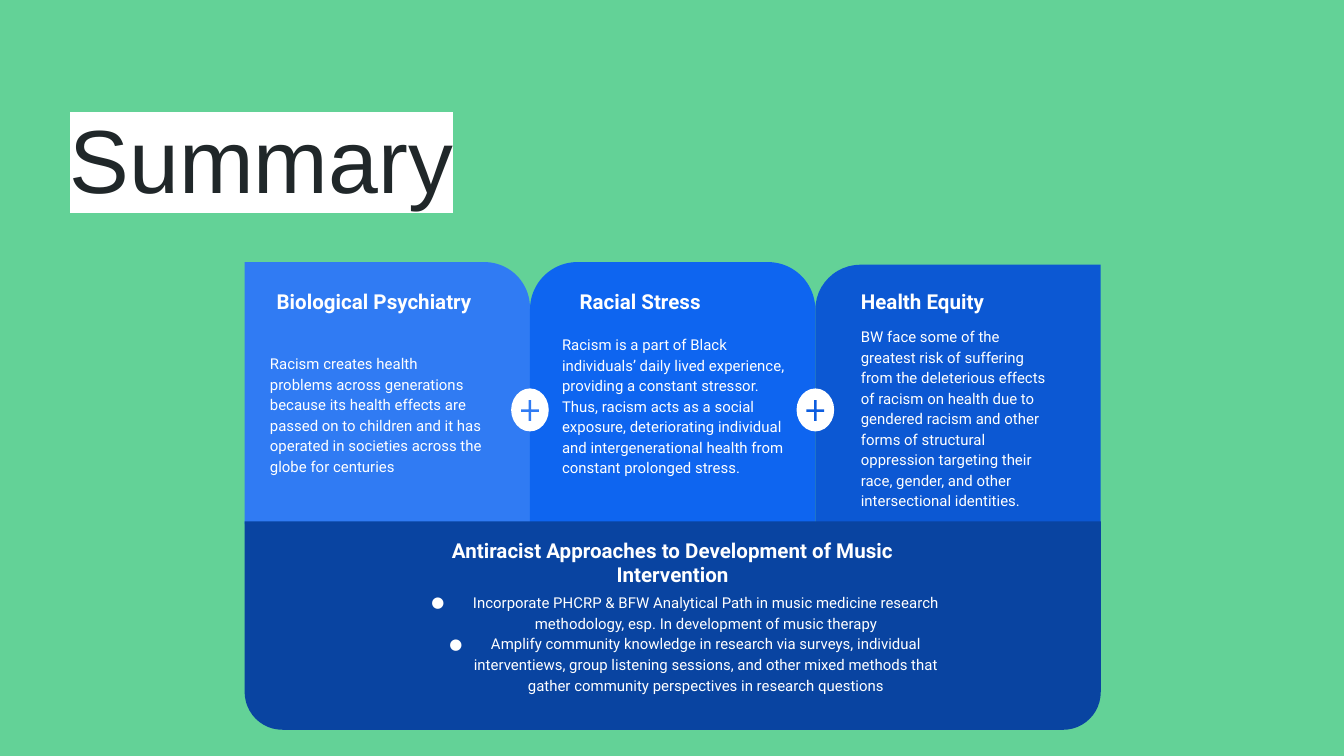
import pptx
import pptx.dml.color
import pptx.enum.shapes
import pptx.enum.text
import pptx.oxml.ns
import pptx.util
from lxml import etree

Inches = pptx.util.Inches
Pt = pptx.util.Pt
RGBColor = pptx.dml.color.RGBColor
Shape = pptx.enum.shapes.MSO_SHAPE
Align = pptx.enum.text.PP_ALIGN
Anchor = pptx.enum.text.MSO_ANCHOR
AutoSize = pptx.enum.text.MSO_AUTO_SIZE
qn = pptx.oxml.ns.qn

GREEN = RGBColor(0x63, 0xD2, 0x97)
INK = RGBColor(0x20, 0x27, 0x29)
WHITE = RGBColor(0xFF, 0xFF, 0xFF)
LIGHT_BLUE = RGBColor(0x30, 0x7B, 0xF3)
BRIGHT_BLUE = RGBColor(0x0E, 0x65, 0xF0)
DEEP_BLUE = RGBColor(0x0C, 0x58, 0xD3)
PLUS_BLUE = RGBColor(0x0D, 0x5D, 0xDF)
NAVY = RGBColor(0x09, 0x44, 0xA1)

FRAME = {"word_wrap": True, "auto_size": AutoSize.NONE}
FRAME.update({f"margin_{side}": Inches(0.1) for side in ("left", "top", "right", "bottom")})
TITLE = {"name": "Arial", "size": Pt(48)}
HEADING = {"name": "Roboto", "size": Pt(11), "bold": True}
BODY = {"name": "Roboto", "size": Pt(8)}

DIAGRAM_LEFT, DIAGRAM_WIDTH = 1.82, 6.37
CARD_TOP, CARD_HEIGHT = 1.95, 1.95
CARDS = [
    {"heading": "Biological Psychiatry", "heading_box": (0.14, 0.1, 1.89, 0.57),
     "body": "Racism creates health problems across generations because its health effects "
             "are passed on to children and it has operated in societies across the globe "
             "for centuries",
     "body_box": (0.09, 0.57, 1.79, 0.64), "drop": 0,
     "outline": Shape.ROUND_1_RECTANGLE, "corners": (0.174,), "color": LIGHT_BLUE},
    {"heading": "Racial Stress", "heading_box": (0.27, 0.1, 1.59, 0.57),
     "body": "Racism is a part of Black individuals’ daily lived experience, providing a "
             "constant stressor. Thus, racism acts as a social exposure, deteriorating "
             "individual and intergenerational health from constant prolonged stress.",
     "body_box": (0.14, 0.43, 1.89, 0.64), "drop": 0,
     "outline": Shape.ROUND_2_SAME_RECTANGLE, "corners": (0.181, 0), "color": BRIGHT_BLUE},
    {"heading": "Health Equity", "heading_box": (0.24, 0.1, 1.59, 0.57),
     "body": "BW face some of the greatest risk of suffering from the deleterious effects "
             "of racism on health due to gendered racism and other forms of structural "
             "oppression targeting their race, gender, and other intersectional identities.",
     "body_box": (0.24, 0.37, 1.59, 0.63), "drop": 0.02, "mirrored": True,
     "outline": Shape.ROUND_1_RECTANGLE, "corners": (0.174,), "color": DEEP_BLUE},
]
APPROACHES = [
    "Incorporate PHCRP & BFW Analytical Path in music medicine research methodology, "
    "esp. In development of music therapy",
    "Amplify community knowledge in research via surveys, individual interventiews, "
    "group listening sessions, and other mixed methods that gather community "
    "perspectives in research questions",
]


def apply_format(target, values):
    """Set each attribute named in a dict of format values."""
    for name, value in values.items():
        setattr(target, name, value)


def add_panel(slide, outline, box, color, corners=()):
    """Add a borderless filled shape with the given corner adjustments."""
    panel = slide.shapes.add_shape(outline, *map(Inches, box))
    panel.shadow.inherit = False
    panel.fill.solid()
    panel.fill.fore_color.rgb = color
    panel.line.fill.background()
    for index, corner in enumerate(corners):
        panel.adjustments[index] = corner
    return panel


def add_bullet(paragraph):
    """Give a paragraph a white hanging round bullet."""
    properties = paragraph._p.get_or_add_pPr()
    properties.set("marL", str(Inches(0.5)))
    properties.set("indent", str(Inches(-0.31)))
    bullet_color = etree.SubElement(properties, qn("a:buClr"))
    etree.SubElement(bullet_color, qn("a:srgbClr"), val=str(WHITE))
    etree.SubElement(properties, qn("a:buFont"), typeface=BODY["name"])
    etree.SubElement(properties, qn("a:buChar"), char="●")


def add_text(slide, box, lines, font, spacing=1.0, align=Align.LEFT, bulleted=False):
    """Add a white text box with one paragraph for each line."""
    frame = slide.shapes.add_textbox(*map(Inches, box)).text_frame
    apply_format(frame, FRAME)
    for index, line in enumerate(lines):
        paragraph = frame.add_paragraph() if index else frame.paragraphs[0]
        if bulleted:
            add_bullet(paragraph)
        apply_format(paragraph, {"alignment": align, "line_spacing": spacing})
        run = paragraph.add_run()
        run.text = line
        apply_format(run.font, font)
        run.font.color.rgb = WHITE


def add_title(slide, box):
    """Place the highlighted slide title."""
    title = slide.shapes.title
    left, top, width, height = map(Inches, box)
    apply_format(title, {"left": left, "top": top, "width": width, "height": height})
    apply_format(title.text_frame, {**FRAME, "vertical_anchor": Anchor.MIDDLE})
    paragraph = title.text_frame.paragraphs[0]
    paragraph.alignment = Align.LEFT
    run = paragraph.add_run()
    run.text = "Summary"
    apply_format(run.font, TITLE)
    run.font.color.rgb = INK
    highlight = etree.Element(qn("a:highlight"))
    etree.SubElement(highlight, qn("a:srgbClr"), val=str(WHITE))
    run._r.get_or_add_rPr().find(qn("a:latin")).addprevious(highlight)


def add_card(slide, box, card):
    """Draw one topic card with its heading and body."""
    left, top, width, height = box
    drop = card["drop"]
    panel = add_panel(slide, card["outline"], (left, top + drop, width, height - drop),
                      card["color"], card["corners"])
    if card.get("mirrored"):
        panel._element.spPr.get_or_add_xfrm().set("flipH", "1")
    for part, font, spacing in (("heading", HEADING, 1.0), ("body", BODY, 1.15)):
        x, y, part_width, part_height = card[f"{part}_box"]
        add_text(slide, (left + x, top + y, part_width, part_height),
                 [card[part]], font, spacing)


def add_plus_badge(slide, box, color):
    """Draw a plus sign centred on a white oval."""
    left, top, width, height = box
    add_panel(slide, Shape.OVAL, box, WHITE)
    add_panel(slide, Shape.MATH_PLUS, (left + 0.05, top + 0.06, width - 0.1, height - 0.11),
              color, (0.099,))


def add_approaches(slide, box):
    """Draw the base panel with its heading and bulleted approaches."""
    left, top, width, height = box
    base = add_panel(slide, Shape.ROUND_2_SAME_RECTANGLE, box, NAVY, (0.181, 0))
    base.rotation = 180
    text_left, text_width = left + 1.01, width - 2.02
    add_text(slide, (text_left, top + 0.02, text_width, 0.43),
             ["Antiracist Approaches to Development of Music Intervention"],
             HEADING, align=Align.CENTER)
    add_text(slide, (text_left, top + 0.42, text_width, 0.48), APPROACHES, BODY,
             1.15, Align.CENTER, bulleted=True)


def main():
    """Build the summary slide and save it."""
    deck = pptx.Presentation()
    deck.slide_width = Inches(10)
    deck.slide_height = deck.slide_width * 9 // 16
    slide = deck.slides.add_slide(deck.slide_layouts[5])
    slide.background.fill.solid()
    slide.background.fill.fore_color.rgb = GREEN
    add_title(slide, (0.42, 0.21, 3.53, 1.93))
    card_width = DIAGRAM_WIDTH / len(CARDS)
    card_lefts = [DIAGRAM_LEFT + index * card_width for index in range(len(CARDS))]
    for left, card in zip(card_lefts, CARDS):
        add_card(slide, (left, CARD_TOP, card_width, CARD_HEIGHT), card)
    for seam, color in zip(card_lefts[1:], (LIGHT_BLUE, PLUS_BLUE)):
        add_plus_badge(slide, (seam - 0.14, 2.89, 0.28, 0.32), color)
    add_approaches(slide, (DIAGRAM_LEFT, 3.88, DIAGRAM_WIDTH, 1.55))
    deck.save("out.pptx")


if __name__ == "__main__":
    main()
